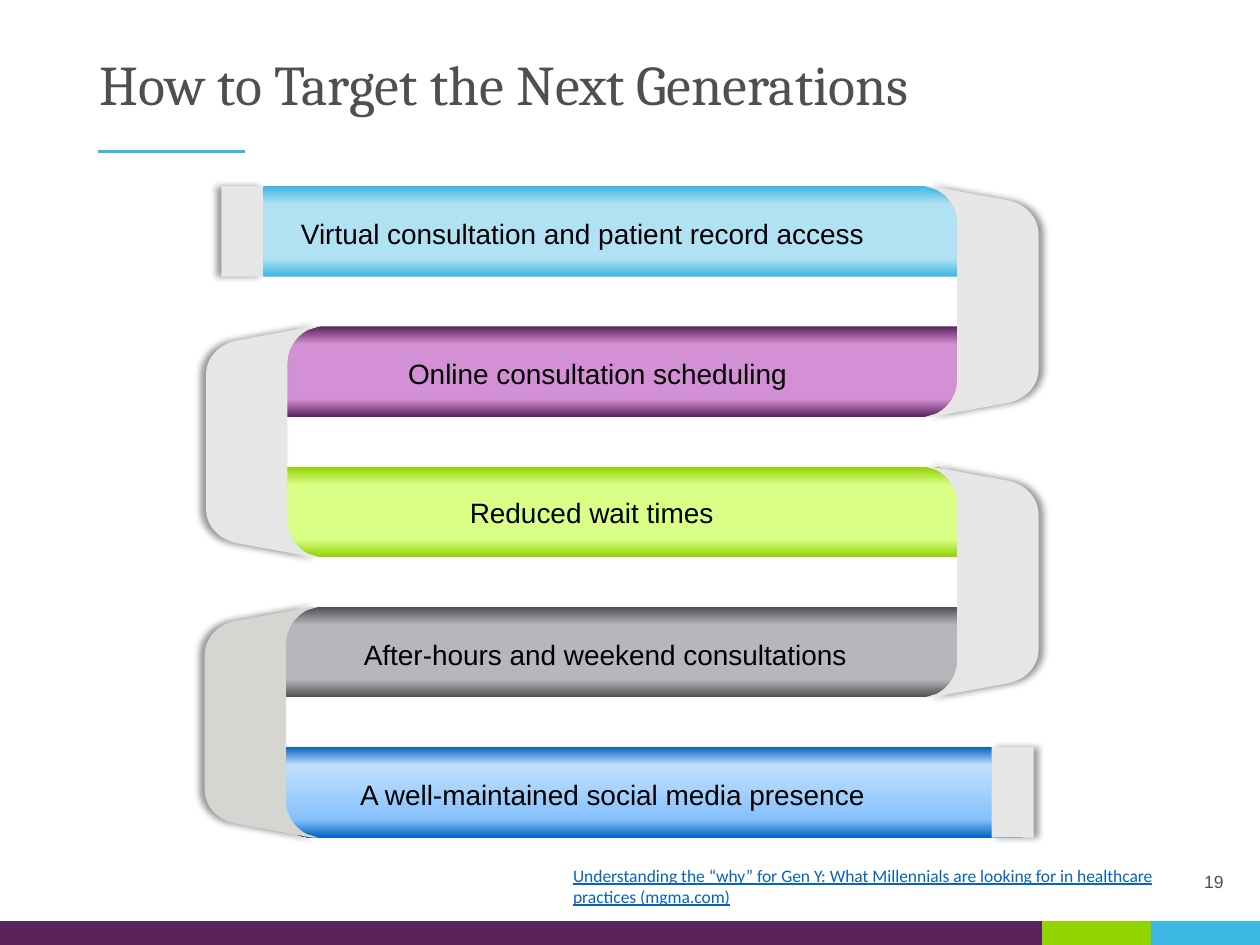
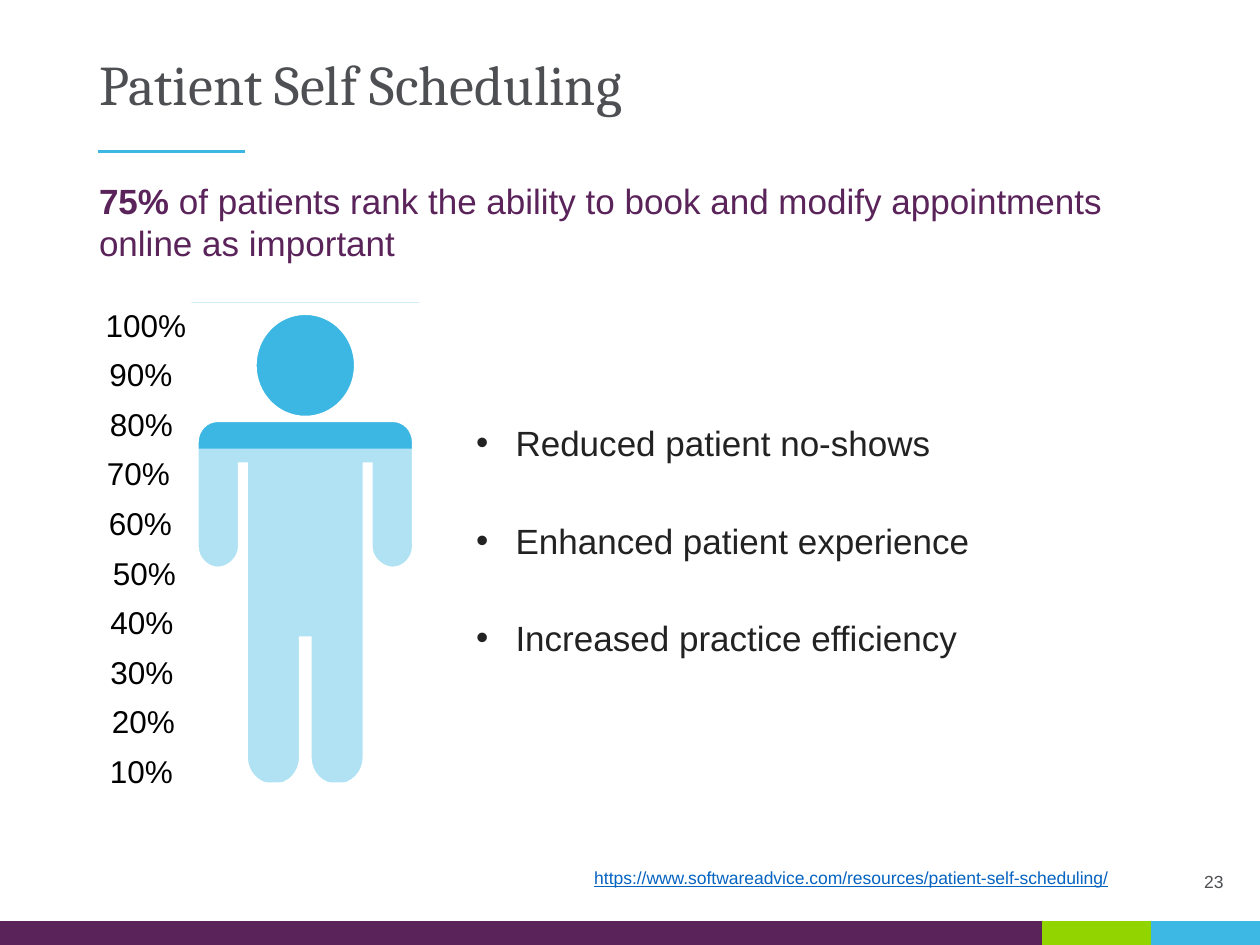
from dataclasses import dataclass

import lxml.etree
import pptx
import pptx.dml.color
import pptx.enum.shapes
import pptx.enum.text
import pptx.oxml.ns
import pptx.util

Pt = pptx.util.Pt
qn = pptx.oxml.ns.qn
ALIGN = pptx.enum.text.PP_ALIGN
ANCHOR = pptx.enum.text.MSO_ANCHOR
FIT = pptx.enum.text.MSO_AUTO_SIZE


@dataclass(frozen=True)
class Theme:
    title_font: str = "Cambria"
    body_font: str = "Arial"
    note_font: str = "Calibri"
    title_size: float = 32
    lead_size: float = 20
    scale_size: float = 18
    label_size: float = 16
    note_size: float = 10
    grey: str = "4D4F53"
    black: str = "000000"
    bullet: str = "222222"
    white: str = "FFFFFF"
    purple: str = "5A235A"
    sky: str = "3CB7E3"
    pale_sky: str = "B1E2F4"
    link: str = "0563C1"
    fold: str = "E7E6E6"
    last_fold: str = "D5D6D2"
    band: tuple = ("5A245A", "92D400", "3DB7E4")


THEME = Theme()

# Ribbon geometry
ROW_TOP, ROW_PITCH, ROW_HEIGHT = 106.4, 80.13, 51.7
FOLD_HEIGHT = ROW_PITCH + ROW_HEIGHT
CAP_WIDTH = 24

# Ribbons: label, label left, top and width, left, right, rounded corners, gradient
RIBBONS = [
    ("Virtual consultation and patient record access", 164.9, 120.2, 344.2,
     150.5, 555, {"tr"}, ("3CB7E3", "B1E2F4", "B1E2F4", "3CB7E3")),
    ("Online consultation scheduling", 226.1, 200.2, 272.9,
     157, 555, {"tl", "br"}, ("5A235A", "D490D4", "D490D4", "5A235A")),
    ("Reduced wait times", 261.4, 279.4, 252,
     156.2, 558.7, {"tr", "bl"}, ("92D300", "DAFF87", "DAFF87", "92D300")),
    ("After-hours and weekend consultations", 200.9, 360.7, 297.4,
     157, 555, {"tl", "br"}, ("4D4E52", "B7B7BB", "B7B7BB", "4D4E52")),
    ("A well-maintained social media presence", 198.7, 440.6, 316.1,
     151, 584.6, {"bl"}, ("0563C1", "C2E0FD", "85C1FC", "0563C1")),
]

# Folds: tip x, direction (1 opens right, -1 opens left), colour
FOLDS = [
    (528.7, 1, THEME.fold),
    (182.6, -1, THEME.fold),
    (528.7, 1, THEME.fold),
    (181.8, -1, THEME.last_fold),
]

# Left edges of the scale labels, from 100% down to 10%
SCALE_LEFTS = (53.3, 55.4, 55.7, 54, 55.2, 57.4, 56, 56, 56.8, 55.7)


def rgb(colour):
    return pptx.dml.color.RGBColor.from_string(colour)


# Outlines: a step is a point (x, y) or a cubic curve (six numbers)
def pairs(step):
    return list(zip(step[::2], step[1::2]))


def place(steps, x, y, across=1, down=1):
    return [tuple(n for u, v in pairs(step) for n in (x + across * u, y + down * v))
            for step in steps]


def backwards(steps):
    result = [steps[-1][-2:]]
    for step, before in zip(steps[:0:-1], steps[-2::-1]):
        result.append(step[2:4] + step[:2] + before[-2:] if len(step) == 6
                      else before[-2:])
    return result


def paint(shape, colour):
    shape.shadow.inherit = False
    shape.line.fill.background()
    shape.fill.solid()
    shape.fill.fore_color.rgb = rgb(colour)
    return shape


def add_outline(shapes, contours, colour):
    builder = None
    for contour in contours:
        start, *rest = [(Pt(x), Pt(y)) for step in contour for x, y in pairs(step)]
        if builder is None:
            builder = shapes.build_freeform(*start)
        else:
            builder.move_to(*start)
        builder.add_line_segments(rest, close=True)
    shape = builder.convert_to_shape()

    # Join the three points of each curve into one Bézier segment
    lines = shape._element.spPr.iter(qn("a:lnTo"))
    lines = iter(list(lines))
    for step in (step for contour in contours for step in contour[1:]):
        segment = next(lines)
        if len(step) == 6:
            segment.addprevious(curve := lxml.etree.Element(qn("a:cubicBezTo")))
            for part in (segment, next(lines), next(lines)):
                curve.append(part[0])
                part.getparent().remove(part)
    return paint(shape, colour)


def add_rect(shapes, left, top, width, height, colour):
    rect = shapes.add_shape(pptx.enum.shapes.MSO_SHAPE.RECTANGLE,
                            Pt(left), Pt(top), Pt(width), Pt(height))
    return paint(rect, colour)


def add_side_shadow(shape, degrees):
    effects = shape._element.spPr.find(qn("a:effectLst"))
    shadow = lxml.etree.SubElement(
        effects, qn("a:outerShdw"), blurRad=str(Pt(4)), dist=str(Pt(3)),
        dir=str(degrees * 60000), algn="ctr", rotWithShape="0")
    colour = lxml.etree.SubElement(shadow, qn("a:srgbClr"), val=THEME.black)
    lxml.etree.SubElement(colour, qn("a:alpha"), val="40000")


def shade_vertically(shape, colours):
    shape.fill.gradient()
    shape.fill.gradient_angle = 270
    stops = shape._element.spPr.find(qn("a:gradFill")).find(qn("a:gsLst"))
    for stop in list(stops):
        stops.remove(stop)
    for percent, colour in zip((0, 20, 80, 100), colours):
        stop = lxml.etree.SubElement(stops, qn("a:gs"), pos=str(percent * 1000))
        lxml.etree.SubElement(stop, qn("a:srgbClr"), val=colour)


# Text
def style(run, size, colour, font=THEME.body_font, bold=False, underline=False):
    run.font.size = Pt(size)
    run.font.name = font
    run.font.color.rgb = rgb(colour)
    run.font.bold = bold
    run.font.underline = underline


def add_text(shapes, left, top, width, height, text, size, colour, wrap=True, **look):
    box = shapes.add_textbox(Pt(left), Pt(top), Pt(width), Pt(height))
    frame = box.text_frame
    frame.word_wrap = wrap
    frame.text = text
    style(frame.paragraphs[0].runs[0], size, colour, **look)
    return frame


def add_source(slide, left, top, height, text, font):
    add_text(slide.shapes, left, top, 360, height, text, THEME.note_size, THEME.link,
             font=font, underline=True)


def add_bullet(slide, top, text):
    point = add_text(slide.shapes, 265, top, 360, 31.7, text,
                     THEME.lead_size, THEME.bullet).paragraphs[0]
    properties = point._p.get_or_add_pPr()
    properties.set("marL", str(Pt(22.5)))
    properties.set("indent", str(-Pt(22.5)))
    lxml.etree.SubElement(properties, qn("a:buFont"), typeface="Arial")
    lxml.etree.SubElement(properties, qn("a:buChar"), char="•")


# Title rule and footer band, drawn once and moved to the layout
def dress_layout(slide):
    rule = slide.shapes.add_connector(pptx.enum.shapes.MSO_CONNECTOR.STRAIGHT,
                                      Pt(56.2), Pt(86.4), Pt(140), Pt(86.4))
    rule.line.width = Pt(1.5)
    rule.line.color.rgb = rgb(THEME.sky)
    lxml.etree.SubElement(rule._element.spPr, qn("a:effectLst"))

    band = slide.shapes.add_group_shape()
    edges = (0, 595.6, 657.8, 720)
    for left, right, colour in zip(edges, edges[1:], THEME.band):
        add_rect(band.shapes, left, 526.3, right - left, 15.8, colour)

    tree = slide.slide_layout.shapes._spTree
    for part in (rule, band):
        for number, properties in enumerate(part._element.iter(qn("p:cNvPr"))):
            properties.set("id", str(100 + 10 * part.shape_id + number))
        tree.append(part._element)


def start_slide(deck, title, page):
    slide = deck.slides.add_slide(deck.slide_layouts.get_by_name("Title Only"))
    if len(deck.slides) == 1:
        dress_layout(slide)
    heading = slide.shapes.title
    heading.left, heading.top, heading.width, heading.height = map(
        Pt, (49.7, 28.8, 620.6, 44.6))
    frame = heading.text_frame
    frame.text = title
    frame.word_wrap = True
    frame.auto_size = FIT.NONE
    frame.vertical_anchor = ANCHOR.MIDDLE
    frame.margin_bottom = Pt(5.6)
    frame.paragraphs[0].alignment = ALIGN.LEFT
    frame.paragraphs[0].line_spacing = 0.9
    style(frame.paragraphs[0].runs[0], THEME.title_size, THEME.grey, THEME.title_font)

    number = add_text(slide.shapes, 85.7, 494, 620.6, 19.4, str(page),
                      THEME.note_size, THEME.grey)
    number.vertical_anchor = ANCHOR.BOTTOM
    number.paragraphs[0].alignment = ALIGN.RIGHT
    number.paragraphs[0].line_spacing = 0.9
    return slide


# Ribbon parts
def add_ribbon(slide, left, right, top, rounded, colours):
    bottom = top + ROW_HEIGHT
    corners = [("tl", left, top, 1, 1), ("tr", right, top, -1, 1),
               ("br", right, bottom, -1, -1), ("bl", left, bottom, 1, -1)]
    steps = []
    for corner, x, y, across, down in corners:
        bend = [(0, 0)]
        if corner in rounded:
            bend = [(26.5, 0), (22.5, 0.5), (9, 4.5, 0, 14, 0, 25.5)]
        if across == down:
            bend = backwards(bend)
        steps += place(bend, x, y, across, down)
    shade_vertically(add_outline(slide.shapes, [steps], THEME.white), colours)


def add_fold(slide, tip, top, direction, colour):
    upper = [(18.3, 20.9), (18.3, 13, 13.5, 5.5, 6.5, 2), (0, 0), (3.6, 0),
             (47.2, 8), (57.6, 10.1, 64.8, 18, 64.8, 27.4)]
    lower = place(backwards(upper), 0, FOLD_HEIGHT, 1, -1)
    fold = add_outline(slide.shapes, [place(upper + lower, tip, top, direction)], colour)
    add_side_shadow(fold, 0 if direction > 0 else 180)


def add_cap(slide, left, top, shadow_degrees):
    cap = add_rect(slide.shapes, left, top, CAP_WIDTH, ROW_HEIGHT, THEME.fold)
    add_side_shadow(cap, shadow_degrees)


def build_targeting(deck):
    slide = start_slide(deck, "How to Target the Next Generations", 19)
    tops = [ROW_TOP + ROW_PITCH * row for row in range(len(RIBBONS))]
    add_cap(slide, 126.5, tops[0], 180)
    for top, (*_, left, right, rounded, colours) in zip(tops, RIBBONS):
        add_ribbon(slide, left, right, top, rounded, colours)
    for top, (tip, direction, colour) in zip(tops, FOLDS):
        add_fold(slide, tip, top, direction, colour)
    for label, left, top, width, *_ in RIBBONS:
        add_text(slide.shapes, left, top, width, 26.6, label,
                 THEME.label_size, THEME.black)
    add_source(slide, 320.4, 490.7, 31.7,
               "Understanding the “why” for Gen Y: What Millennials are looking "
               "for in healthcare practices (mgma.com)", THEME.note_font)
    add_cap(slide, 566.7, tops[-1], 0)


# Person seen through a white frame, filled to the 75% mark
def add_person(slide):
    person = slide.shapes.add_group_shape().shapes
    add_rect(person, 109.4, 172.8, 130.3, 270, THEME.sky)
    add_rect(person, 111.6, 256.3, 128.2, 190.8, THEME.pale_sky)
    centre = 174.5
    half = [
        (50, 241.2), (56, 241.2, 60.9, 246.2, 60.9, 252.7),
        (60.9, 312.5), (60.9, 318.2, 56, 323.8, 50, 323.8),
        (44, 323.8, 38.5, 318.2, 38.5, 312.5),
        (38.5, 264.2), (32.8, 264.2),
        (32.8, 432.7), (32.8, 441.4, 26, 447.8, 18.2, 447.8),
        (10, 447.8, 3.6, 441.4, 3.6, 432.7), (3.6, 363.6)]
    body = place(half, centre, 0) + place(backwards(half), centre, 0, -1)
    arch = [(-27.8, 0), (-27.8, -15.9, -15.4, -28.8, 0, -28.8),
            (15.4, -28.8, 27.8, -15.9, 27.8, 0)]
    chin = place(backwards(arch), 0, 0, 1, -1)[1:]
    head = place(arch + chin, centre, 208.8)
    frame = [(104.4, 172.8), (244.1, 172.8), (244.1, 455), (104.4, 455)]
    add_outline(person, [body, head, frame], THEME.white)


def add_scale(slide):
    scale = slide.shapes.add_group_shape().shapes
    for row, left in enumerate(SCALE_LEFTS):
        add_text(scale, left, 171.2 + 28.32 * row, 50.4 if row else 61.9, 29,
                 f"{100 - 10 * row}%", THEME.scale_size, THEME.black, wrap=False)


def build_scheduling(deck):
    slide = start_slide(deck, "Patient Self Scheduling", 23)
    lead = add_text(slide.shapes, 49.5, 99, 620.6, 55.4, "75% ",
                    THEME.lead_size, THEME.purple, bold=True)
    claim = lead.paragraphs[0].add_run()
    claim.text = ("of patients rank the ability to book and modify "
                  "appointments online as important")
    style(claim, THEME.lead_size, THEME.purple)

    benefits = ("Reduced patient no-shows", "Enhanced patient experience",
                "Increased practice efficiency")
    for row, benefit in enumerate(benefits):
        add_bullet(slide, 237.6 + 55.44 * row, benefit)

    add_person(slide)
    add_scale(slide)
    add_source(slide, 332.5, 491.8, 19.4,
               "https://www.softwareadvice.com/resources/patient-self-scheduling/",
               THEME.body_font)


def main():
    deck = pptx.Presentation()
    deck.slide_width, deck.slide_height = Pt(720), Pt(540)
    build_targeting(deck)
    build_scheduling(deck)
    deck.save("out.pptx")


if __name__ == "__main__":
    main()
